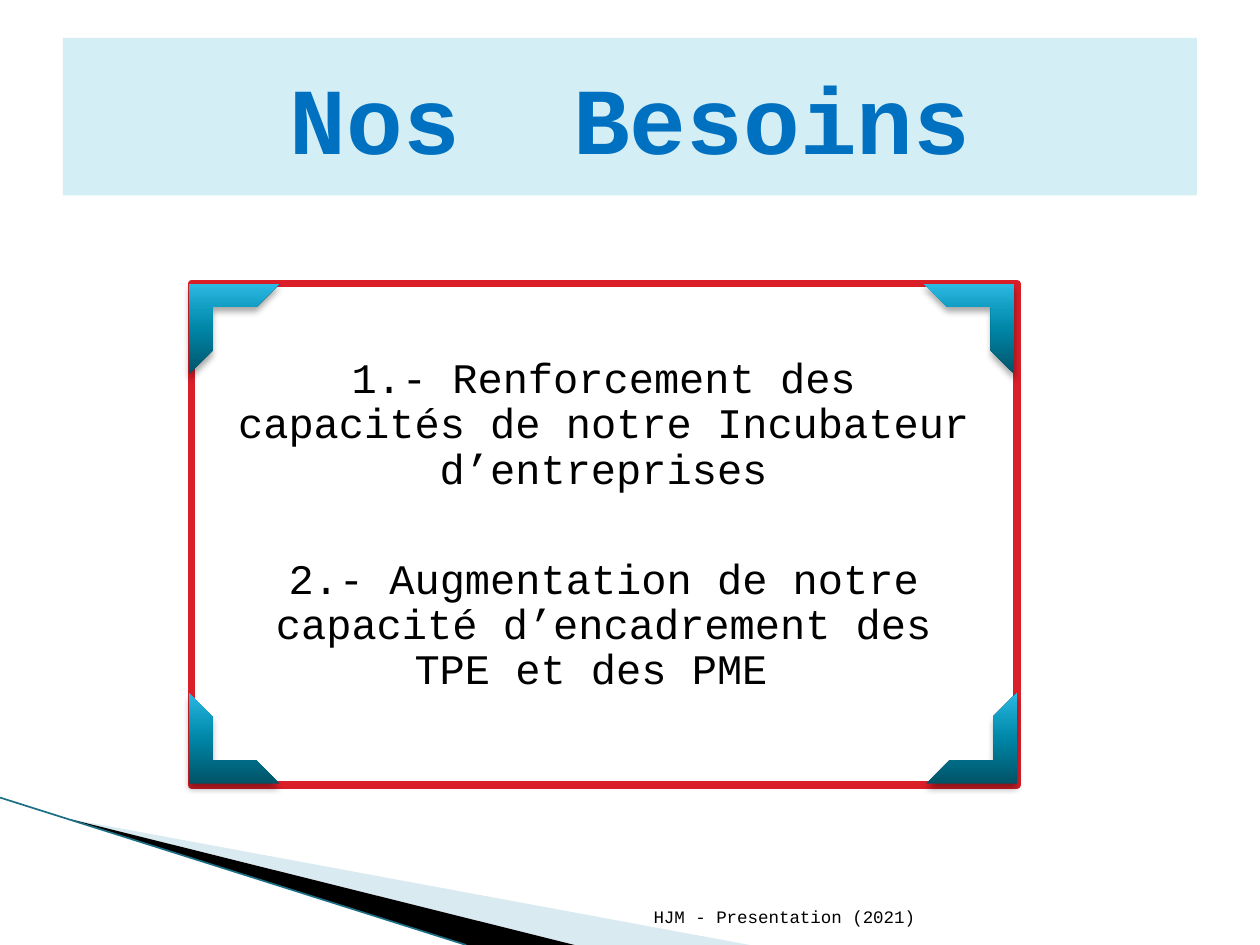
import pptx
import pptx.util
import pptx.dml.color
import pptx.enum.shapes
import pptx.enum.text
import pptx.oxml
import pptx.oxml.ns

Inches = pptx.util.Inches
Pt = pptx.util.Pt
KIND = pptx.enum.shapes.MSO_SHAPE
ALIGN = pptx.enum.text.PP_ALIGN
ANCHOR = pptx.enum.text.MSO_ANCHOR
NS = pptx.oxml.ns.nsdecls("a")
FONT = "Courier New"
BLACK = "000000"
STOPS = [(0, "005367"), (50, "0086A7"), (70, "0E9ABE"), (100, "2CB9E3")]


def color(code):
    return pptx.dml.color.RGBColor.from_string(code)


def xml(text):
    return pptx.oxml.parse_xml(text)


def paint(shape, code):
    """Give a shape a flat fill with no line and no shadow."""
    shape.shadow.inherit = False
    shape.fill.solid()
    shape.fill.fore_color.rgb = color(code)
    shape.line.fill.background()


def write(frame, lines, size, align, anchor, bold=False, pitch=None, gap=0):
    """Write one paragraph per line, with a gap between paragraphs."""
    frame.word_wrap = True
    frame.vertical_anchor = anchor
    for i, line in enumerate(lines):
        para = frame.add_paragraph() if i else frame.paragraphs[0]
        para.alignment = align
        para.line_spacing = pitch
        if i:
            para.space_before = Pt(gap)
        run = para.add_run()
        run.text = line
        run.font.name = FONT
        run.font.size = Pt(size)
        run.font.bold = bold
        run.font.color.rgb = color(BLACK)
    return frame


def wedge(slide, points, code, alpha=None):
    """Draw one filled band of the swoosh."""
    points = [(Inches(x), Inches(y)) for x, y in points]
    build = slide.shapes.build_freeform(*points[0])
    build.add_line_segments(points[1:], close=True)
    shape = build.convert_to_shape()
    paint(shape, code)
    if alpha:
        tone = shape.fill._xPr.find(".//" + pptx.oxml.ns.qn("a:srgbClr"))
        tone.append(xml(f'<a:alpha {NS} val="{alpha * 1000}"/>'))


def swoosh(slide, left, top, base):
    """Bands and edge line that run from the left side to the slide foot."""
    tip = (left + 0.55, top + 0.17)
    wedge(slide, [tip, (left + 5.95, base), (left + 4.56, base)], "A0CBDC", 40)
    wedge(slide, [tip, (left + 4.56, base), (left + 3.7, base)], BLACK)
    edge = slide.shapes.add_connector(
        pptx.enum.shapes.MSO_CONNECTOR.STRAIGHT,
        Inches(left), Inches(top), Inches(left + 3.7), Inches(base))
    edge.line.color.rgb = color("1B6E84")
    edge.line.width = Pt(0.95)
    edge._element.spPr.append(xml(f"<a:effectLst {NS}/>"))


def banner(slide, left, top, width, height):
    """Title band."""
    box = slide.shapes.add_shape(
        KIND.RECTANGLE, Inches(left), Inches(top), Inches(width), Inches(height))
    paint(box, "D3EEF5")
    frame = write(box.text_frame, ["Nos  Besoins"], 54,
                  ALIGN.CENTER, ANCHOR.MIDDLE, bold=True)
    frame.paragraphs[0].runs[0].font.color.rgb = color("0070C0")


def corner(slide, left, top, size, turn):
    """Half frame with an upright gradient and a soft shadow."""
    shape = slide.shapes.add_shape(
        KIND.HALF_FRAME, Inches(left), Inches(top), Inches(size), Inches(size))
    shape.adjustments[0] = shape.adjustments[1] = 0.258
    shape.rotation = turn
    shape.line.fill.background()
    stops = "".join(f'<a:gs pos="{at * 1000}"><a:srgbClr val="{code}"/></a:gs>'
                    for at, code in STOPS)
    props = shape._element.spPr
    props.insert(2, xml(
        f'<a:gradFill {NS} rotWithShape="0"><a:gsLst>{stops}</a:gsLst>'
        '<a:lin ang="16200000" scaled="0"/></a:gradFill>'))
    props.append(xml(
        f'<a:effectLst {NS}><a:outerShdw blurRad="{Pt(4)}" dist="{Pt(3)}" '
        'dir="5400000" rotWithShape="0"><a:srgbClr val="000000">'
        '<a:alpha val="35000"/></a:srgbClr></a:outerShdw></a:effectLst>'))


def panel(slide, left, top, width, height, lines):
    """Red frame with its text and four corner pieces."""
    box = slide.shapes.add_shape(
        KIND.RECTANGLE, Inches(left), Inches(top), Inches(width), Inches(height))
    paint(box, "FFFFFF")
    box.line.color.rgb = color("DA1F28")
    box.line.width = Pt(4.33)
    box.line._ln.append(xml(f"<a:round {NS}/>"))

    # Needs, one paragraph each
    body = slide.shapes.add_textbox(
        Inches(left + 0.18), Inches(top + 0.58),
        Inches(width - 0.37), Inches(height - 1.3))
    frame = write(body.text_frame, lines, 24, ALIGN.CENTER, ANCHOR.MIDDLE,
                  pitch=0.9, gap=37)
    frame.margin_left = frame.margin_right = Inches(0.1)
    frame.margin_top = frame.margin_bottom = Inches(0.1)

    # Corner pieces
    size = 0.72
    near, far = left - 0.02, left + width - size
    low = top + height - size - 0.01
    for x, y, turn in [(near, top, 0), (far - 0.02, top, 90),
                       (near, low, 270), (far, low, 180)]:
        corner(slide, x, y, size, turn)


def footer(slide, left, top, width, height):
    """Right-aligned foot note."""
    box = slide.shapes.add_textbox(
        Inches(left), Inches(top), Inches(width), Inches(height))
    write(box.text_frame, ["HJM - Presentation (2021)"], 10,
          ALIGN.RIGHT, ANCHOR.BOTTOM)


def main():
    deck = pptx.Presentation()
    deck.slide_width, deck.slide_height = Inches(10), Inches(7.5)
    slide = deck.slides.add_slide(deck.slide_layouts[6])
    swoosh(slide, 0, 6.33, 7.5)
    panel(slide, 1.52, 2.25, 6.55, 3.98, [
        "1.- Renforcement des capacités de notre Incubateur d’entreprises",
        "2.- Augmentation de notre capacité d’encadrement des TPE et des PME ",
    ])
    banner(slide, 0.5, 0.3, 9, 1.25)
    footer(slide, 4.79, 7.01, 2.57, 0.4)
    deck.save("out.pptx")


if __name__ == "__main__":
    main()
